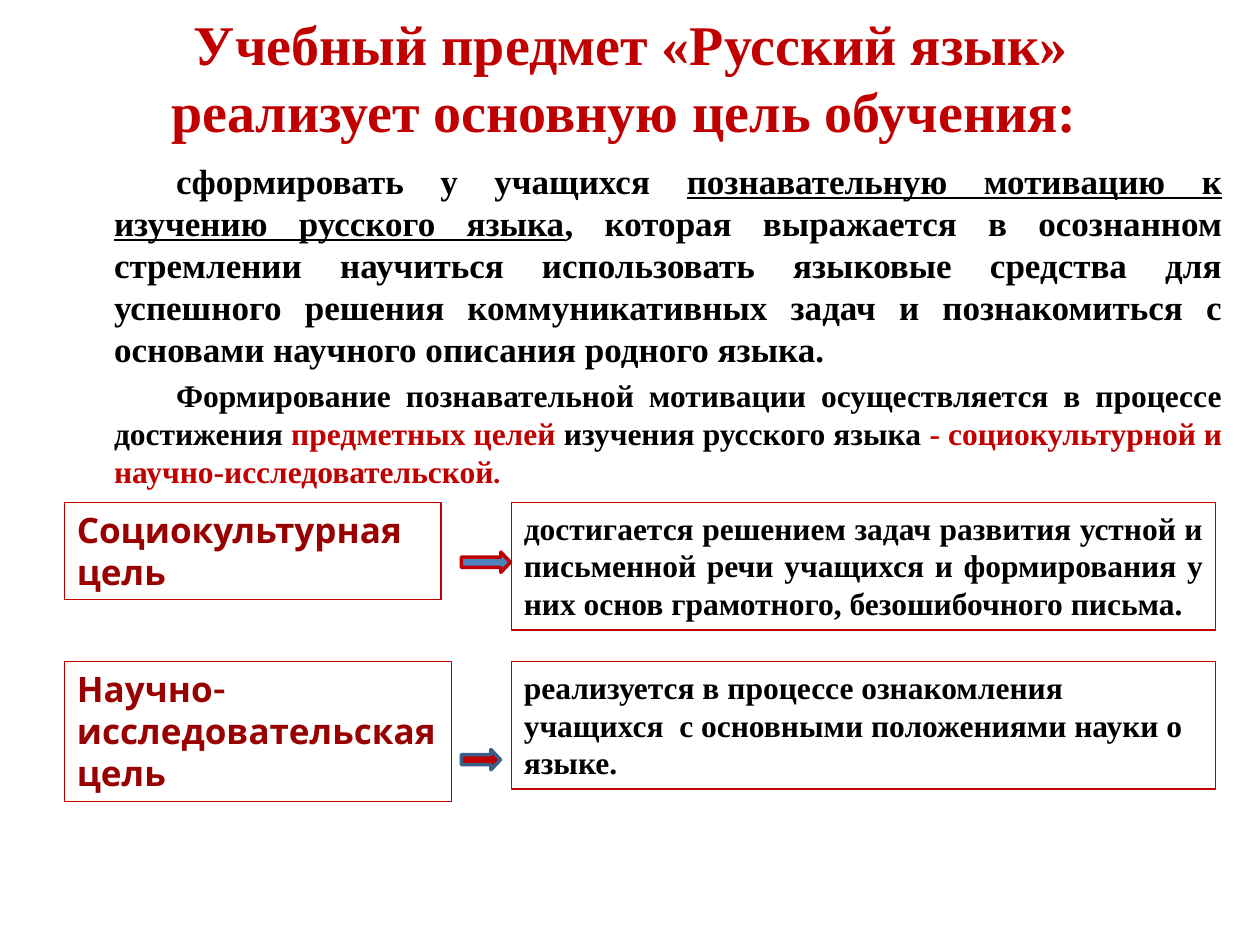
from pptx import Presentation
from pptx.dml.color import RGBColor
from pptx.enum.shapes import MSO_SHAPE
from pptx.enum.text import MSO_ANCHOR, MSO_AUTO_SIZE, PP_ALIGN
from pptx.util import Cm, Pt

RED, MAROON, BLACK, WHITE = "C00000", "990000", "000000", "FFFFFF"
BLUE, DARK_BLUE = "4F81BD", "3A5F8C"
SERIF, SANS = "Times New Roman", "Karla"

TITLE = "Учебный предмет «Русский язык» реализует основную цель обучения: "
AIM = [
    ("cформировать у учащихся ", {}),
    ("познавательную мотивацию к изучению русского языка", {"underline": True}),
    (", которая выражается в осознанном стремлении научиться использовать "
     "языковые средства для успешного решения коммуникативных задач и "
     "познакомиться с основами научного описания родного языка.", {}),
]
MOTIVATION = [
    ("Формирование познавательной мотивации осуществляется в процессе "
     "достижения ", {}),
    ("предметных целей ", {"color": RED}),
    ("изучения русского языка ", {}),
    ("- социокультурной и научно-исследовательской", {"color": RED}),
    (".", {"color": RED, "size": Pt(16), "name": SANS}),
]

GOAL_LEFT, TASK_LEFT, ARROW_LEFT = 1.3, 10.31, 9.3
GOALS = [
    {"top": 10.13, "goal": "Социокультурная цель", "goal_size": (7.59, 1.96),
     "task": "достигается решением задач развития устной и письменной речи "
             "учащихся и формирования у них основ грамотного, безошибочного "
             "письма.",
     "align": PP_ALIGN.JUSTIFY,
     "arrow": (11.13, 0.99), "fill": BLUE, "line": RED},
    {"top": 13.34, "goal": "Научно-исследовательская цель",
     "goal_size": (7.8, 2.82),
     "task": "реализуется в процессе ознакомления учащихся  с основными "
             "положениями науки о языке.",
     "align": PP_ALIGN.LEFT,
     "arrow": (15.11, 0.79), "fill": RED, "line": DARK_BLUE},
]


def rgb(value):
    return RGBColor.from_string(value)


def place(item, left, top, width, height):
    item.left, item.top = Cm(left), Cm(top)
    item.width, item.height = Cm(width), Cm(height)


def add_span(paragraph, text, **format_values):
    span = paragraph.add_run()
    span.text = text
    values = {"name": SERIF, "size": Pt(18), "bold": True, "color": BLACK}
    values.update(format_values)
    span.font.color.rgb = rgb(values.pop("color"))
    for name, value in values.items():
        setattr(span.font, name, value)


def format_frame(frame, anchor=MSO_ANCHOR.TOP):
    values = {"word_wrap": True, "vertical_anchor": anchor,
              "auto_size": MSO_AUTO_SIZE.SHAPE_TO_FIT_TEXT}
    for name, value in values.items():
        setattr(frame, name, value)


def add_title(page):
    title = page.shapes.title
    place(title, 1.3, 0.05, 22.86, 3)
    format_frame(title.text_frame, MSO_ANCHOR.MIDDLE)
    paragraph = title.text_frame.paragraphs[0]
    paragraph.alignment = PP_ALIGN.CENTER
    add_span(paragraph, TITLE, size=Pt(32), color=RED)


def add_body(page):
    box = page.shapes.add_textbox(0, 0, 0, 0)
    place(box, 1.09, 3.05, 23.8, 6.98)
    box.fill.solid()
    box.fill.fore_color.rgb = rgb(WHITE)
    frame = box.text_frame
    format_frame(frame, MSO_ANCHOR.MIDDLE)
    for paragraph, spans, size in (
        (frame.paragraphs[0], AIM, 20),
        (frame.add_paragraph(), MOTIVATION, 18),
    ):
        paragraph.alignment = PP_ALIGN.JUSTIFY
        properties = paragraph._p.get_or_add_pPr()
        properties.set("marL", str(Cm(0.96)))
        properties.set("indent", str(Cm(1.25)))
        for text, values in spans:
            add_span(paragraph, text, **{"size": Pt(size), **values})
    frame.paragraphs[1].space_before = Pt(4)


def add_framed_text(page, position, text, align=PP_ALIGN.LEFT, **format_values):
    box = page.shapes.add_textbox(0, 0, 0, 0)
    place(box, *position)
    box.line.color.rgb = rgb(RED)
    box.line.width = Pt(0.75)
    format_frame(box.text_frame)
    paragraph = box.text_frame.paragraphs[0]
    paragraph.alignment = align
    add_span(paragraph, text, **format_values)


def add_arrow(page, top, width, fill, line):
    arrow = page.shapes.add_shape(MSO_SHAPE.RIGHT_ARROW, 0, 0, 0, 0)
    place(arrow, ARROW_LEFT, top, width, 0.41)
    arrow.shadow.inherit = False
    arrow.adjustments[1] = 0.47
    arrow.fill.solid()
    arrow.fill.fore_color.rgb = rgb(fill)
    arrow.line.color.rgb = rgb(line)
    arrow.line.width = Pt(2)


def add_goal(page, row):
    add_framed_text(page, (GOAL_LEFT, row["top"], *row["goal_size"]),
                    row["goal"], name=SANS, size=Pt(20), color=MAROON)
    add_framed_text(page, (TASK_LEFT, row["top"], 14.2, 2.57),
                    row["task"], row["align"])
    add_arrow(page, *row["arrow"], row["fill"], row["line"])


def main():
    deck = Presentation()
    deck.slide_width, deck.slide_height = Cm(25.4), Cm(19.05)
    page = deck.slides.add_slide(deck.slide_layouts.get_by_name("Title Only"))
    add_title(page)
    add_body(page)
    for row in GOALS:
        add_goal(page, row)
    deck.save("out.pptx")


if __name__ == "__main__":
    main()
